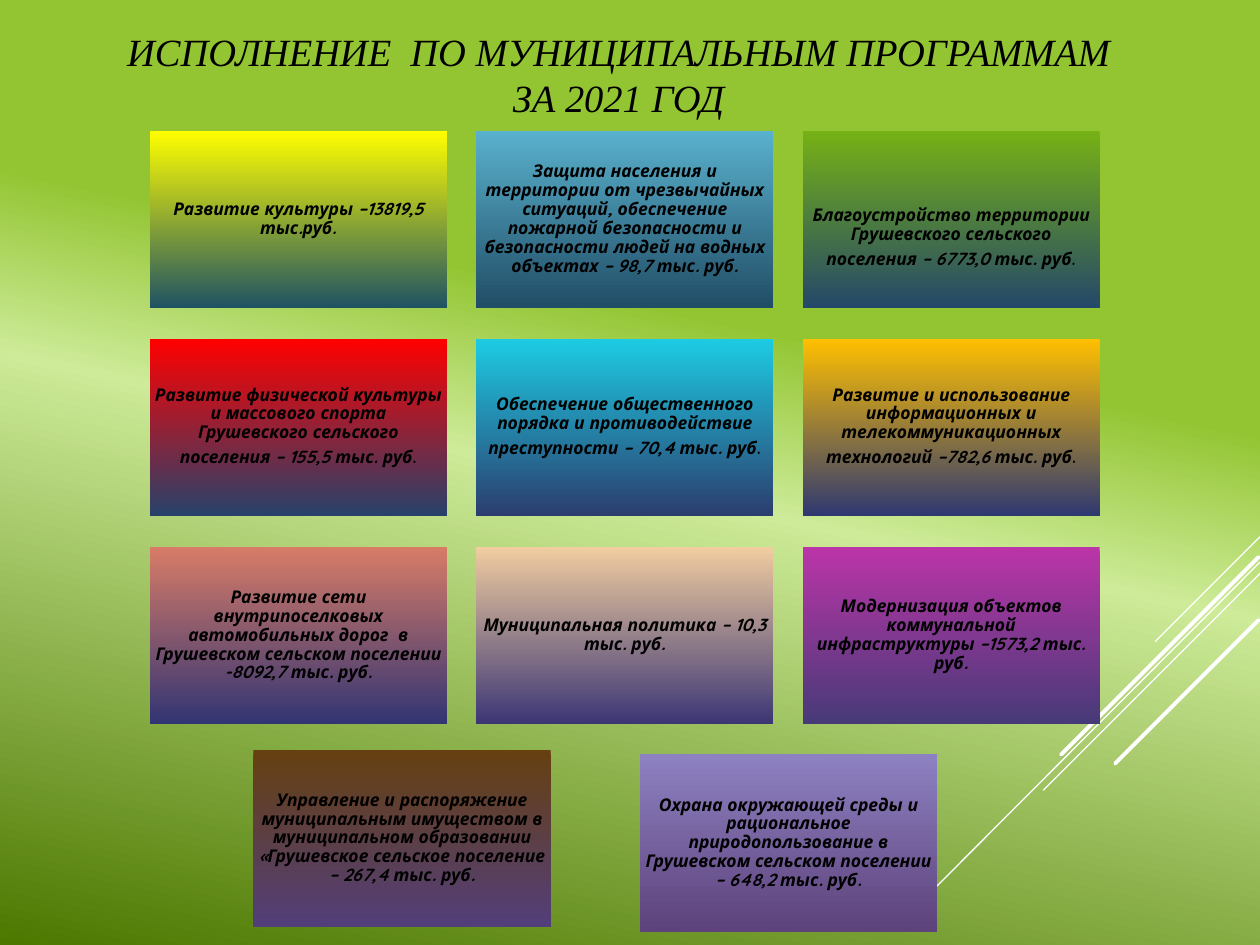
from copy import deepcopy
from typing import NamedTuple

from lxml import etree
from pptx import Presentation
from pptx import util as u
from pptx.dml import color
from pptx.enum import shapes, text
from pptx.oxml import ns

CARD_WIDTH, CARD_HEIGHT = 5.99, 3.58
GRID_LEFT, GRID_TOP = 3.02, 2.64
COLUMN_STEP, ROW_STEP = 6.58, 4.19
COLUMNS = 3
INSET = 0.1
LOWERED_INSET = 0.88
BLACK, WHITE = "000000", "FFFFFF"


class Program(NamedTuple):
    label: str
    top_color: str
    bottom_color: str
    large_dot: bool = False
    top_inset: float = INSET


class Ray(NamedTuple):
    x1: float
    y1: float
    x2: float
    y2: float
    weight: float


TITLE = "ИСПОЛНЕНИЕ  ПО МУНИЦИПАЛЬНЫМ ПРОГРАММАМ ЗА 2021 ГОД"

GRID_PROGRAMS = [
    Program("Развитие культуры –13819,5 тыс.руб.", "FFFF00", "1E5263"),
    Program("Защита населения и территории от чрезвычайных ситуаций, обеспечение "
            "пожарной безопасности и безопасности людей на водных объектах – 98,7 тыс. руб.",
            "59B1CD", "214D66"),
    Program("Благоустройство территории Грушевского сельского поселения – 6773,0 тыс. руб",
            "76B115", "244869", True, LOWERED_INSET),
    Program("Развитие физической культуры и массового спорта Грушевского сельского "
            "поселения – 155,5 тыс. руб", "FF0000", "27426B", True),
    Program("Обеспечение общественного порядка и противодействие преступности – 70,4 тыс. руб",
            "1DCBE3", "2B3D6E", True),
    Program("Развитие и использование информационных и телекоммуникационных "
            "технологий –782,6 тыс. руб", "FFC000", "2E3871", True),
    Program("Развитие сети внутрипоселковых автомобильных дорог  в Грушевском сельском "
            "поселении -8092,7 тыс. руб.", "D87C67", "323473"),
    Program("Муниципальная политика – 10,3 тыс. руб.", "F1CDA0", "3C3675"),
    Program("Модернизация объектов коммунальной инфраструктуры –1573,2 тыс. руб.",
            "BB35A8", "473A78"),
]

BOTTOM_PROGRAMS = [
    (5.11, 15.11, Program(
        "Управление и распоряжение муниципальным имуществом в муниципальном образовании "
        "«Грушевское сельское поселение – 267,4 тыс. руб.", "664010", "523E7A")),
    (12.9, 15.21, Program(
        "Охрана окружающей среды и рациональное природопользование в Грушевском сельском "
        "поселении – 648,2 тыс. руб.", "8D81C1", "5D427B")),
]

RAYS = [
    Ray(25.4, 10.82, 23.29, 12.93, 0.75),
    Ray(25.4, 11.33, 18.54, 18.21, 0.75),
    Ray(25.4, 11.56, 21.03, 15.93, 0.75),
    Ray(25.37, 11.23, 21.39, 15.21, 2.25),
    Ray(25.37, 12.5, 22.48, 15.39, 2.25),
]


def rgb(value: str) -> color.RGBColor:
    return color.RGBColor.from_string(value)


def apply(target, formats: dict) -> None:
    for name, value in formats.items():
        setattr(target, name, value)


def paint_gradient(fill, owner, stops: list[tuple[float, str]], angle: float) -> None:
    fill.gradient()
    fill.gradient_angle = 360 - angle
    stop_list = next(owner.iter(ns.qn("a:gsLst")))
    for _ in stops[2:]:
        stop_list.append(deepcopy(stop_list[-1]))
    for stop, (position, value) in zip(fill.gradient_stops, stops):
        stop.position = position
        stop.color.rgb = rgb(value)


def write_run(paragraph, words: str, font: str, size: float, bold: bool, italic: bool) -> None:
    run = paragraph.add_run()
    run.text = words
    apply(run.font, {"name": font, "size": u.Pt(size), "bold": bold, "italic": italic})
    run.font.color.rgb = rgb(BLACK)


def set_frame(frame, side: float, top: float, bottom: float):
    apply(frame, {
        "word_wrap": True,
        "auto_size": text.MSO_AUTO_SIZE.NONE,
        "vertical_anchor": text.MSO_ANCHOR.MIDDLE,
        "margin_left": u.Cm(side),
        "margin_right": u.Cm(side),
        "margin_top": u.Cm(top),
        "margin_bottom": u.Cm(bottom),
    })
    paragraph = frame.paragraphs[0]
    paragraph.alignment = text.PP_ALIGN.CENTER
    return paragraph


def draw_title(slide) -> None:
    title = slide.shapes.title
    apply(title, {"left": u.Cm(2.31), "top": u.Cm(0.33),
                  "width": u.Cm(20.32), "height": u.Cm(2.34)})
    paragraph = set_frame(title.text_frame, 0.2, 0.13, 0.13)
    write_run(paragraph, TITLE, "Times New Roman", 22, False, True)


def draw_ray(slide, ray: Ray) -> None:
    line = slide.shapes.add_connector(
        shapes.MSO_CONNECTOR.STRAIGHT,
        u.Cm(ray.x1), u.Cm(ray.y1), u.Cm(ray.x2), u.Cm(ray.y2))
    line.line.color.rgb = rgb(WHITE)
    line.line.width = u.Pt(ray.weight)
    properties = line.element.spPr
    properties.find(ns.qn("a:ln")).set("cap", "rnd")
    etree.SubElement(properties, ns.qn("a:effectLst"))


def draw_program(slide, left: float, top: float, program: Program) -> None:
    card = slide.shapes.add_shape(
        shapes.MSO_SHAPE.RECTANGLE,
        u.Cm(left), u.Cm(top), u.Cm(CARD_WIDTH), u.Cm(CARD_HEIGHT))
    card.shadow.inherit = False
    card.line.fill.background()
    paint_gradient(card.fill, card.element,
                   [(0, program.top_color), (1, program.bottom_color)], 90)
    paragraph = set_frame(card.text_frame, INSET, program.top_inset, INSET)
    paragraph.line_spacing = 0.9
    write_run(paragraph, program.label, "Quicksand", 10, True, True)
    if program.large_dot:
        write_run(paragraph, ".", "Quicksand", 14, False, False)


def main() -> None:
    deck = Presentation()
    apply(deck, {"slide_width": u.Cm(25.4), "slide_height": u.Cm(19.05)})
    slide = deck.slides.add_slide(deck.slide_layouts.get_by_name("Title Only"))
    paint_gradient(slide.background.fill, slide.element,
                   [(0.36, "93C533"), (0.51, "CDEB98"), (1, "4C7800")], 102)
    for ray in RAYS:
        draw_ray(slide, ray)
    draw_title(slide)
    for index, program in enumerate(GRID_PROGRAMS):
        row, column = divmod(index, COLUMNS)
        draw_program(slide, GRID_LEFT + column * COLUMN_STEP,
                     GRID_TOP + row * ROW_STEP, program)
    for left, top, program in BOTTOM_PROGRAMS:
        draw_program(slide, left, top, program)
    deck.save("out.pptx")


if __name__ == "__main__":
    main()
